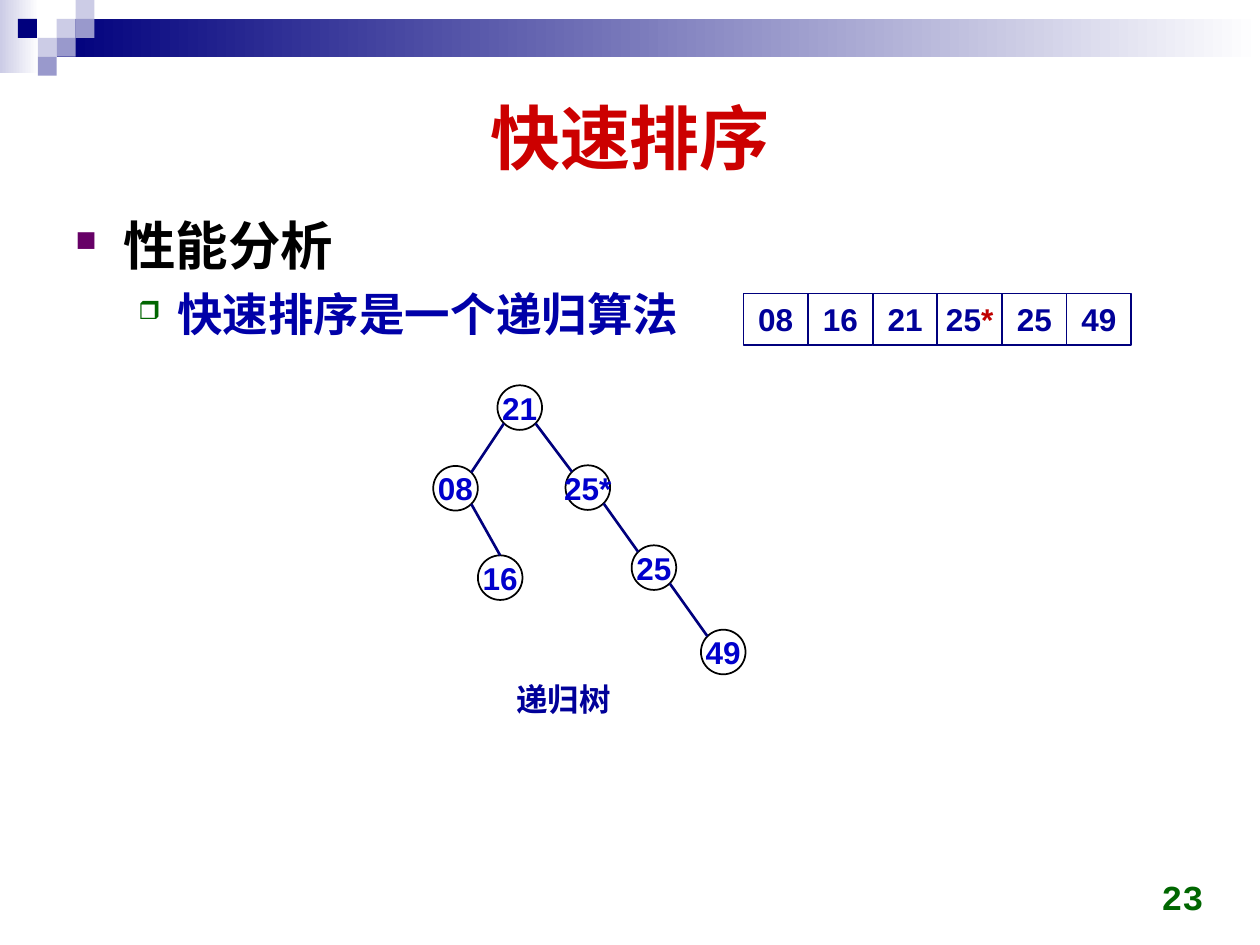
import pptx
import pptx.dml.color
import pptx.enum.shapes
import pptx.enum.text
import pptx.util
import lxml.etree

Pt = pptx.util.Pt
Align = pptx.enum.text.PP_ALIGN
Anchor = pptx.enum.text.MSO_ANCHOR
Kind = pptx.enum.shapes.MSO_SHAPE

deck = pptx.Presentation()
deck.slide_width = pptx.util.Inches(10)
deck.slide_height = pptx.util.Inches(7.5)
slide = deck.slides.add_slide(deck.slide_layouts[6])
shapes = slide.shapes
unit = deck.slide_width / 100  # grid of 100 columns by 75 rows


def tint(text):
    return pptx.dml.color.RGBColor.from_string(text)


def put(box, kind=None, runs=(), size=18, font="Arial", align=Align.CENTER,
        **frame):
    """Add a shape or text box at grid box, with bold coloured runs."""
    place = [round(n * unit) for n in box]
    if kind is None:
        item = shapes.add_textbox(*place)
    else:
        item = shapes.add_shape(kind, *place)
        item.shadow.inherit = False
        item.fill.background()
        item.line.fill.background()
    for key, value in frame.items():
        setattr(item.text_frame, key, value)
    para = item.text_frame.paragraphs[0]
    para.alignment = align
    for text, shade in runs:
        run = para.add_run()
        run.text = text
        look = {"size": Pt(size), "name": font, "bold": True}
        for key, value in look.items():
            setattr(run.font, key, value)
        run.font.color.rgb = tint(shade)
    return item


# Header: two fading bands, then a mosaic of small squares
for box, start in [((0, 0, 3.1, 5.8), "CCCCE6"),
                   ((4.5, 1.5, 95.5, 3), "00007D")]:
    band = put(box, Kind.RECTANGLE)
    band.fill.gradient()
    band.fill.gradient_angle = 0
    for stop, shade in zip(band.fill.gradient_stops, (start, "FFFFFF")):
        stop.color.rgb = tint(shade)

tile = 1.5
mosaic = {"CCCCE6": [(3, 1), (4, 0), (2, 2)],
          "9999CC": [(4, 1), (3, 2), (2, 3)],
          "00007D": [(0.95, 1)]}
for shade, cells in mosaic.items():
    for col, row in cells:
        square = put((col * tile, row * tile, tile, tile), Kind.RECTANGLE)
        square.fill.solid()
        square.fill.fore_color.rgb = tint(shade)

# Title and page number
put((5, 5, 90, 11.6), runs=[("快速排序", "CC0000")], size=40,
    word_wrap=True, vertical_anchor=Anchor.MIDDLE)
put((73.2, 68.3, 23.3, 5), runs=[("23", "006600")], size=20,
    font="Courier New", align=Align.RIGHT, word_wrap=True,
    vertical_anchor=Anchor.BOTTOM)

# Bulleted points
points = [("性能分析", 30, "000000", "■", "660066", 0.38, 0.38),
          ("快速排序是一个递归算法", 26, "0000A8", "❒", "006600", 0.81, 0.31)]
body = put((5, 16.2, 90, 52), word_wrap=True).text_frame
for level, (text, size, shade, mark, hue, left, hang) in enumerate(points):
    para = body.add_paragraph() if level else body.paragraphs[0]
    form = {"text": text, "level": level, "alignment": Align.LEFT,
            "line_spacing": 1.05, "space_before": Pt(size * 0.15)}
    for key, value in form.items():
        setattr(para, key, value)
    look = {"size": Pt(size), "name": "Arial", "bold": True}
    for key, value in look.items():
        setattr(para.runs[0].font, key, value)
    para.runs[0].font.color.rgb = tint(shade)
    props = para._p.get_or_add_pPr()
    props.set("marL", str(pptx.util.Inches(left)))
    props.set("indent", str(-pptx.util.Inches(hang)))
    space = pptx.oxml.ns.qn("a:buClr")
    color = lxml.etree.SubElement(props, space)
    lxml.etree.SubElement(color, pptx.oxml.ns.qn("a:srgbClr"), val=hue)
    lxml.etree.SubElement(props, pptx.oxml.ns.qn("a:buSzPct"), val="55000")
    lxml.etree.SubElement(props, pptx.oxml.ns.qn("a:buChar"), char=mark)

# Sorted array
wide = 5.13
for col, value in enumerate(["08", "16", "21", "25*", "25", "49"]):
    runs = [(value[:2], "000099")]
    if value[2:]:
        runs.append((value[2:], "C00000"))
    cell = put((59 + col * wide, 23.3, wide, 4.1), Kind.RECTANGLE, runs,
               word_wrap=False, vertical_anchor=Anchor.TOP)
    cell.line.color.rgb = tint("00007D")
    cell.line.width = Pt(1)

# Recursion tree: circle centres, then edges between their 45-degree points
ring = 1.77
nodes = {"21": (41.25, 32.35), "08": (36.15, 38.75), "16": (39.7, 45.85),
         "25*": (46.65, 38.7), "25": (51.9, 45.05), "49": (57.4, 51.75)}
for value, (x, y) in nodes.items():
    node = put((x - ring, y - ring, 2 * ring, 2 * ring), Kind.OVAL,
               [(value, "0000CC")], word_wrap=False,
               vertical_anchor=Anchor.MIDDLE)
    node.line.color.rgb = tint("000000")
    node.line.width = Pt(1)

slant = ring * 0.71
edges = [("21", "08", -1, 1), ("21", "25*", 1, -1), ("08", "16", 1, 0),
         ("25*", "25", 1, -1), ("25", "49", 1, -1)]
for upper, lower, out, into in edges:
    (x1, y1), (x2, y2) = nodes[upper], nodes[lower]
    rise = slant if into else ring  # 0 means the top of the circle
    ends = (x1 + out * slant, y1 + slant, x2 + into * slant, y2 - rise)
    edge = shapes.add_connector(pptx.enum.shapes.MSO_CONNECTOR.STRAIGHT,
                                *[round(n * unit) for n in ends])
    edge.line.color.rgb = tint("00007D")
    edge.line.width = Pt(1.5)
    lxml.etree.SubElement(edge._element.spPr,
                          pptx.oxml.ns.qn("a:effectLst"))

# Caption
put((40, 53.5, 9.6, 4), runs=[("递归树", "000099")], align=Align.LEFT,
    word_wrap=False)

deck.save("out.pptx")
